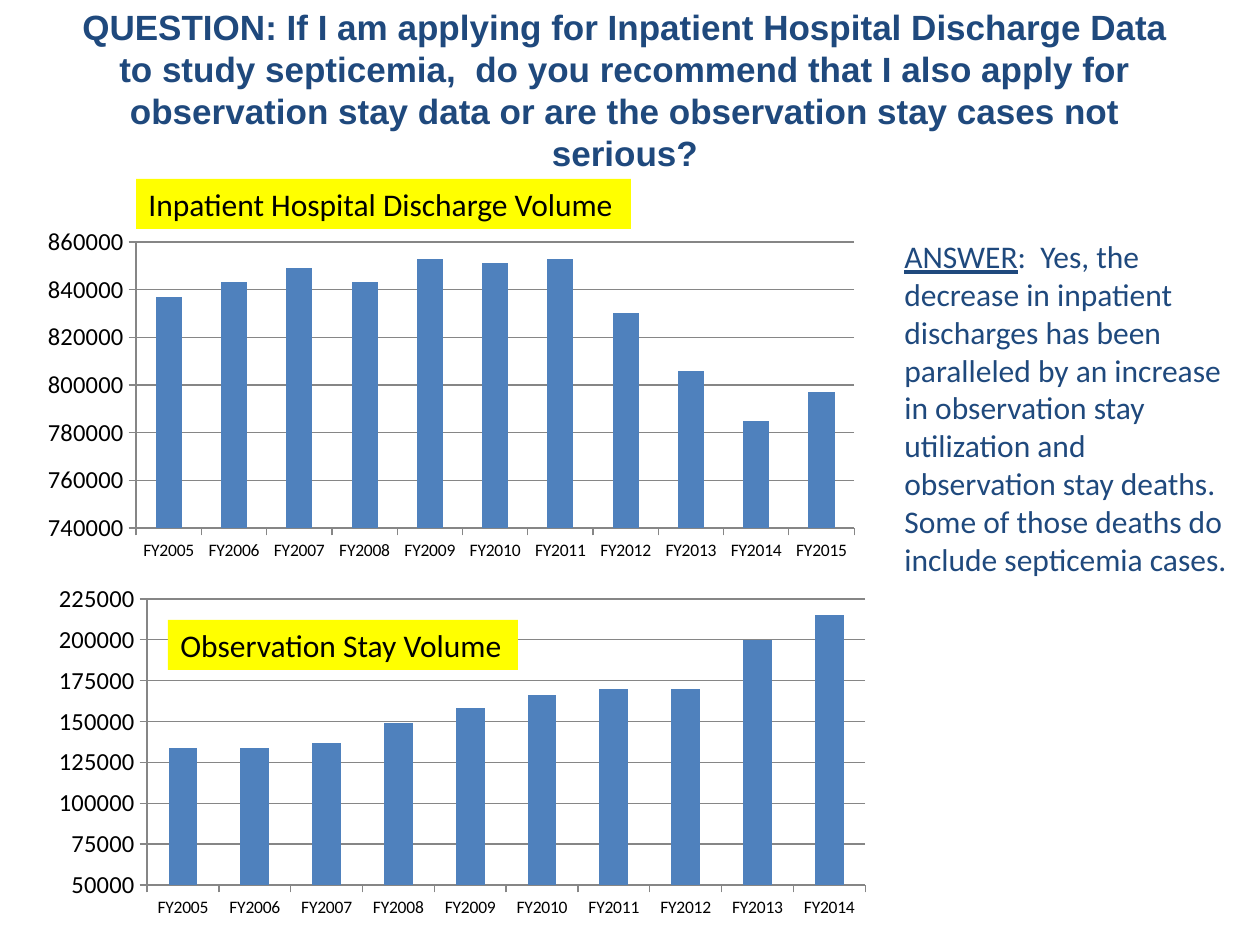
from pptx import Presentation
from pptx.chart.data import CategoryChartData
from pptx.dml.color import RGBColor
from pptx.enum.chart import XL_CHART_TYPE as CT, XL_TICK_MARK as TM
from pptx.enum.shapes import MSO_SHAPE as SHAPE
from pptx.enum.text import MSO_ANCHOR as ANCHOR, MSO_AUTO_SIZE as FIT, PP_ALIGN as ALIGN
from pptx.util import Emu, Pt

PX_PER_INCH = 126
NAVY = RGBColor(0x1F, 0x49, 0x7D)
BLUE = RGBColor(0x4F, 0x81, 0xBD)
YELLOW = RGBColor(0xFF, 0xFF, 0x00)
BLACK = RGBColor(0x00, 0x00, 0x00)
GRAY = RGBColor(0x86, 0x86, 0x86)

INPATIENT = [837000, 843000, 849000, 843000, 853000, 851000,
             853000, 830000, 806000, 785000, 797000]
OBSERVATION = [134000, 134000, 137000, 149000, 158000,
               166000, 170000, 170000, 200000, 215000]


def px(*lengths):
    return [Emu(round(n * 914400 / PX_PER_INCH)) for n in lengths]


class Deck:
    """Holds the presentation, its style and the current slide."""
    font = "Calibri"
    size = 18

    def __init__(self, width, height):
        self.prs = Presentation()
        self.prs.slide_width, self.prs.slide_height = px(width, height)
        self.s = self.prs.slides.add_slide(self.prs.slide_layouts[6])

    def style(self, font, size, color, name=None):
        font.name, font.size = name or self.font, Pt(size)
        font.color.rgb = color

    def run(self, p, text, color, size=None, name=None):
        r = p.add_run()
        r.text = text
        self.style(r.font, size or self.size, color, name)
        return r

    def text_box(self, *box):
        tf = self.s.shapes.add_textbox(*px(*box)).text_frame
        tf.word_wrap = True
        return tf

    def title(self, text, *box):
        tf = self.text_box(*box)
        tf.vertical_anchor = ANCHOR.MIDDLE
        p = tf.paragraphs[0]
        p.alignment = ALIGN.CENTER
        p.line_spacing = Pt(24)
        self.run(p, text, NAVY, 20, "Arial").font.bold = True

    def answer(self, lead, text, *box):
        tf = self.text_box(*box)
        tf.auto_size = FIT.SHAPE_TO_FIT_TEXT
        p = tf.paragraphs[0]
        self.run(p, lead, NAVY).font.underline = True
        self.run(p, text, NAVY)

    def label(self, text, *box):
        sp = self.s.shapes.add_shape(SHAPE.RECTANGLE, *px(*box))
        sp.shadow.inherit = False
        sp.fill.solid()
        sp.fill.fore_color.rgb = YELLOW
        sp.line.fill.background()
        tf = sp.text_frame
        tf.word_wrap = False
        tf.auto_size = FIT.SHAPE_TO_FIT_TEXT
        p = tf.paragraphs[0]
        p.alignment = ALIGN.LEFT
        self.run(p, text, BLACK)

    def column_chart(self, values, low, high, step, *box):
        data = CategoryChartData(number_format="General")
        data.categories = [f"FY{2005 + i}" for i in range(len(values))]
        data.add_series("Series 1", values)
        chart = self.s.shapes.add_chart(CT.COLUMN_CLUSTERED, *px(*box), data).chart
        chart.has_legend = chart.has_title = False
        self.style(chart.font, self.size, BLACK)
        plot = chart.plots[0]
        plot.gap_width = 150
        plot.vary_by_categories = False
        fill = plot.series[0].format.fill
        fill.solid()
        fill.fore_color.rgb = BLUE
        for axis, size in (chart.category_axis, 10), (chart.value_axis, 14):
            axis.major_tick_mark, axis.minor_tick_mark = TM.OUTSIDE, TM.NONE
            axis.format.line.color.rgb = GRAY
            self.style(axis.tick_labels.font, size, BLACK)
        axis = chart.value_axis
        axis.minimum_scale, axis.maximum_scale, axis.major_unit = low, high, step
        axis.has_major_gridlines = True
        axis.major_gridlines.format.line.color.rgb = GRAY


def main():
    deck = Deck(1260, 945)
    deck.title("QUESTION: If I am applying for Inpatient Hospital Discharge Data "
               "to study septicemia,  do you recommend that I also apply for "
               "observation stay data or are the observation stay cases not serious?",
               63, 22, 1124, 136)
    deck.column_chart(INPATIENT, 740000, 860000, 20000, 31, 220, 840, 347)
    deck.column_chart(OBSERVATION, 50000, 225000, 25000, 42, 577, 840, 347)
    deck.label("Observation Stay Volume", 168, 620, 350, 50)
    deck.label("Inpatient Hospital Discharge Volume", 136, 179, 495, 50)
    deck.answer("ANSWER",
                ":  Yes, the decrease in inpatient discharges has been paralleled by "
                "an increase in observation stay utilization and observation stay "
                "deaths. Some of those deaths do include septicemia cases.",
                892, 231, 357, 357)
    deck.prs.save("out.pptx")


if __name__ == "__main__":
    main()
